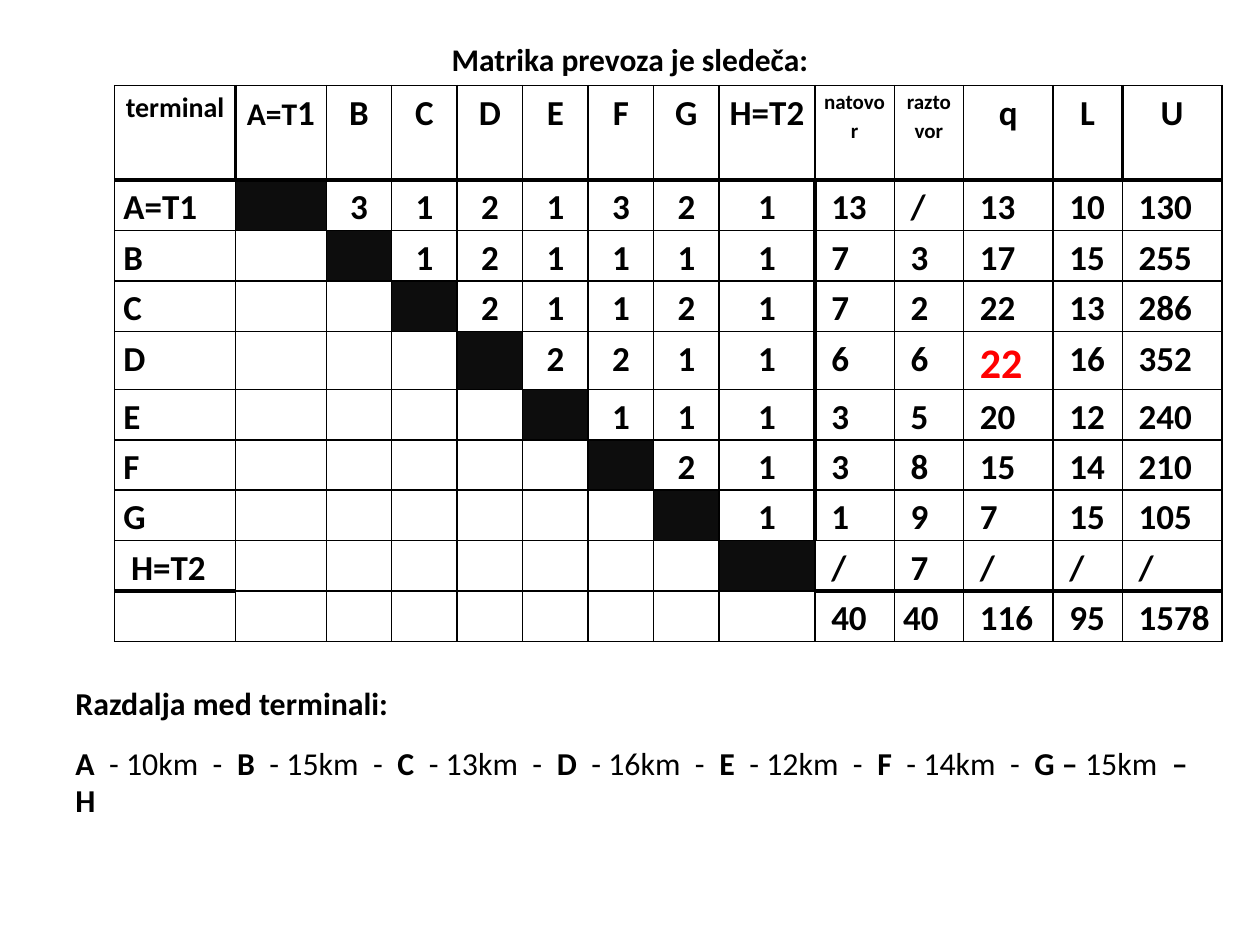
from lxml import etree
from pptx import Presentation
from pptx.dml.color import RGBColor
from pptx.enum.text import MSO_ANCHOR as Anchor, PP_ALIGN as Align
from pptx.oxml.ns import qn
from pptx.util import Inches, Pt

BLACK, DIAGONAL, RED = "000000", "0D0D0D", "FF0000"
THIN, THICK = 1, 2.25
COL_WIDTHS = [0.96, 0.72] + [0.52] * 6 + [0.76, 0.63, 0.55, 0.71, 0.55, 0.79]
ROW_HEIGHTS = [0.75] + [0.4] * 9
HEADERS = ["terminal", "A=T1", *"BCDEFG", "H=T2", "natovor", "raztovor", *"qLU"]
TERMINALS = ["A=T1", *"BCDEFG", "H=T2"]
# Transport counts to the right of the diagonal, one row per terminal
TRANSPORTS = ["3121321", "121111", "21121", "2211", "111", "21", "1", ""]
# natovor, raztovor, q, L, U
SUMMARY = [
    ["13", "/", "13", "10", "130"],
    ["7", "3", "17", "15", "255"],
    ["7", "2", "22", "13", "286"],
    ["6", "6", "22", "16", "352"],
    ["3", "5", "20", "12", "240"],
    ["3", "8", "15", "14", "210"],
    ["1", "9", "7", "15", "105"],
    ["/", "7", "/", "/", "/"],
    ["40", "40", "116", "95", "1578"],
]
DISTANCES = [10, 15, 13, 16, 12, 14]
FIRST_SUMMARY = 9
PEAK_CELL = (4, 11)


def rgb(color):
    return RGBColor.from_string(color)


def add_text(p, text, size=20, color=BLACK, bold=True):
    r = p.add_run()
    r.text = text
    r.font.name = "Calibri"
    r.font.size = Pt(size)
    r.font.bold = bold
    r.font.color.rgb = rgb(color)
    return r


def add_box(slide, left, top, width, height):
    box = slide.shapes.add_textbox(*map(Inches, (left, top, width, height)))
    box.text_frame.word_wrap = True
    return box.text_frame


def add_title(slide, left, top, width, height):
    tf = add_box(slide, left, top, width, height)
    tf.vertical_anchor = Anchor.MIDDLE
    tf.margin_top, tf.margin_bottom = 0, Inches(0.2)
    p = tf.paragraphs[0]
    p.alignment = Align.CENTER
    add_text(p, "Matrika prevoza je sledeča:", size=18)


def line_below(row, col):
    """Width of the line under a cell; row -1 is the top edge."""
    thick = row == 0 or (row == 8 and (col == 0 or col >= FIRST_SUMMARY))
    return THICK if thick else THIN


def line_after(row, col):
    """Width of the line right of a cell; column -1 is the left edge."""
    thick = col in (0, 12) if row == 0 else col == 8 and row <= 7
    return THICK if thick else THIN


def set_borders(cell, row, col):
    tc_pr = cell._tc.get_or_add_tcPr()
    widths = {
        "a:lnL": line_after(row, col - 1),
        "a:lnR": line_after(row, col),
        "a:lnT": line_below(row - 1, col),
        "a:lnB": line_below(row, col),
    }
    for tag, width in widths.items():
        ln = etree.SubElement(tc_pr, qn(tag), w=str(Pt(width)))
        fill = etree.SubElement(ln, qn("a:solidFill"))
        etree.SubElement(fill, qn("a:srgbClr"), val=BLACK)


def matrix_rows():
    rows = [HEADERS]
    for i, (name, counts) in enumerate(zip(TERMINALS, TRANSPORTS)):
        rows.append([name] + [""] * (i + 1) + list(counts) + SUMMARY[i])
    rows.append([""] * FIRST_SUMMARY + SUMMARY[-1])
    return rows


def fill_cell(cell, text, row, col):
    set_borders(cell, row, col)
    if 1 <= row <= 8 and row == col:
        cell.fill.solid()
        cell.fill.fore_color.rgb = rgb(DIAGONAL)
    else:
        cell.fill.background()

    # Summary values and the last terminal are set slightly to the right
    indented = (row > 0 and col >= FIRST_SUMMARY and (row, col) != (9, 10)) or (row, col) == (8, 0)
    cell.margin_left = Inches(0.13 if indented else 0.07)
    cell.margin_right = Inches(0.07)
    cell.margin_top = cell.margin_bottom = 0

    p = cell.text_frame.paragraphs[0]
    if not text:
        p.font.size = Pt(18)
        return
    p.line_spacing = 1.15
    centered = row == 0 or 0 < col < FIRST_SUMMARY
    p.alignment = Align.CENTER if centered else Align.LEFT
    if (row, col) == (0, 1):
        add_text(p, text[:-1], size=18)
        add_text(p, text[-1])
    elif (row, col) == PEAK_CELL:
        add_text(p, text, size=24, color=RED)
    else:
        header_sizes = {0: 16, 9: 12, 10: 12}
        add_text(p, text, size=header_sizes.get(col, 20) if row == 0 else 20)


def add_matrix(slide, left, top, width, height):
    rows = matrix_rows()
    frame = slide.shapes.add_table(
        len(rows), len(HEADERS), *map(Inches, (left, top, width, height)))
    table = frame.table
    table.first_row = table.horz_banding = False
    for column, w in zip(table.columns, COL_WIDTHS):
        column.width = Inches(w)
    for table_row, h in zip(table.rows, ROW_HEIGHTS):
        table_row.height = Inches(h)
    for i, values in enumerate(rows):
        for j, text in enumerate(values):
            fill_cell(table.cell(i, j), text, i, j)


def add_distances(slide, left, top, width, height):
    tf = add_box(slide, left, top, width, height)
    heading, route = tf.paragraphs[0], tf.add_paragraph()
    for p in (heading, route):
        p.line_spacing = 0.95
        p.space_after = Pt(10)
    route.space_before = Pt(3.6)
    add_text(heading, "Razdalja med terminali:", size=18.2)
    for stop, km in zip("ABCDEF", DISTANCES):
        add_text(route, stop, size=18.2)
        add_text(route, f"  - {km}km  -  ", size=18.2, bold=False)
    add_text(route, "G – ", size=18.2)
    add_text(route, "15km", size=18.2, bold=False)
    add_text(route, "  – H", size=18.2)


def main():
    prs = Presentation()
    prs.slide_width, prs.slide_height = Inches(10), Inches(7.5)
    slide = prs.slides.add_slide(prs.slide_layouts[6])
    add_title(slide, 0.5, 0.3, 9, 0.54)
    add_matrix(slide, 0.91, 0.68, 8.82, 4.36)
    add_distances(slide, 0.5, 5.4, 9.22, 0.95)
    prs.save("out.pptx")


if __name__ == "__main__":
    main()
